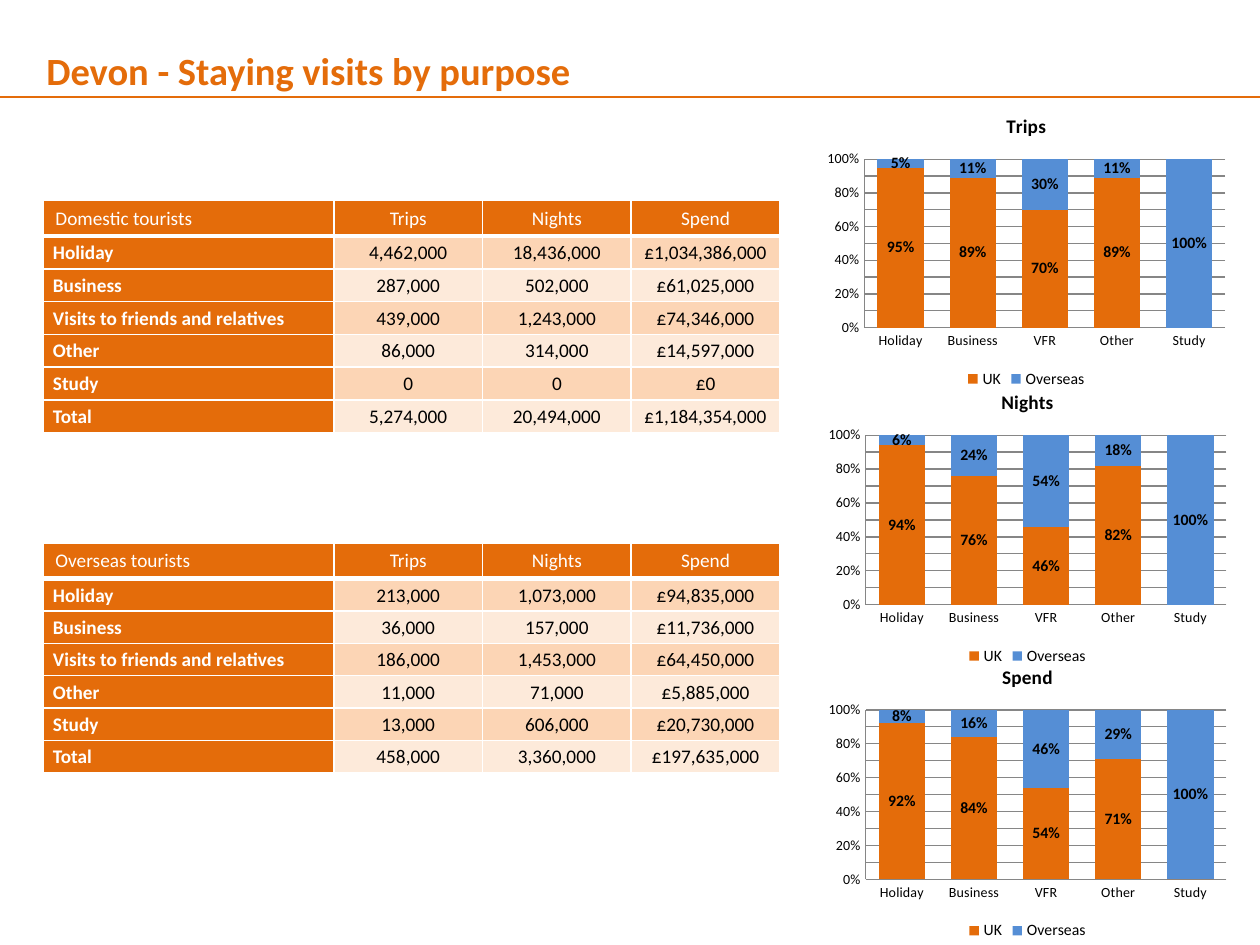
from lxml import etree
from pptx import Presentation
from pptx.chart.data import CategoryChartData
from pptx.dml.color import RGBColor
from pptx.enum.chart import XL_CHART_TYPE, XL_LEGEND_POSITION, XL_TICK_MARK
from pptx.enum.shapes import MSO_CONNECTOR
from pptx.enum.text import MSO_ANCHOR, PP_ALIGN
from pptx.oxml.ns import qn
from pptx.util import Inches, Pt

STACKED = XL_CHART_TYPE.COLUMN_STACKED_100
LEGEND_BOTTOM = XL_LEGEND_POSITION.BOTTOM
NO_TICK = XL_TICK_MARK.NONE
STRAIGHT = MSO_CONNECTOR.STRAIGHT
MIDDLE = MSO_ANCHOR.MIDDLE
LEFT, CENTER = PP_ALIGN.LEFT, PP_ALIGN.CENTER

FONT = "Calibri"
ORANGE = RGBColor(0xE4, 0x6C, 0x0A)
BLUE = RGBColor(0x55, 0x8E, 0xD5)
BANDS = (RGBColor(0xFC, 0xD5, 0xB5), RGBColor(0xFD, 0xEA, 0xDA))
WHITE = RGBColor(0xFF, 0xFF, 0xFF)
BLACK = RGBColor(0, 0, 0)
GRID_GREY = RGBColor(0x86, 0x86, 0x86)

TITLE = "Devon - Staying visits by purpose"
MEASURES = ("Trips", "Nights", "Spend")
# heading, top, height, rows
TABLES = [
    ("Domestic tourists", 1.59, 1.84, [
        ("Holiday", "4,462,000", "18,436,000", "£1,034,386,000"),
        ("Business", "287,000", "502,000", "£61,025,000"),
        ("Visits to friends and relatives", "439,000", "1,243,000", "£74,346,000"),
        ("Other", "86,000", "314,000", "£14,597,000"),
        ("Study", "0", "0", "£0"),
        ("Total", "5,274,000", "20,494,000", "£1,184,354,000"),
    ]),
    ("Overseas tourists", 4.31, 1.82, [
        ("Holiday", "213,000", "1,073,000", "£94,835,000"),
        ("Business", "36,000", "157,000", "£11,736,000"),
        ("Visits to friends and relatives", "186,000", "1,453,000", "£64,450,000"),
        ("Other", "11,000", "71,000", "£5,885,000"),
        ("Study", "13,000", "606,000", "£20,730,000"),
        ("Total", "458,000", "3,360,000", "£197,635,000"),
    ]),
]
TABLE_LEFT, HEADER_HEIGHT = 0.34, 0.28
COLUMN_WIDTHS = (2.31, 1.18, 1.18, 1.18)

CATEGORIES = ("Holiday", "Business", "VFR", "Other", "Study")
# title, left, top, height, UK shares, overseas shares
CHARTS = [
    ("Trips", 6.5, 0.77, 2.35, (0.95, 0.89, 0.7, 0.89, 0), (0.05, 0.11, 0.3, 0.11, 1)),
    ("Nights", 6.51, 2.96, 2.36, (0.94, 0.76, 0.46, 0.82, 0), (0.06, 0.24, 0.54, 0.18, 1)),
    ("Spend", 6.51, 5.14, 2.36, (0.92, 0.84, 0.54, 0.71, 0), (0.08, 0.16, 0.46, 0.29, 1)),
]
CHART_WIDTH = 3.29


def set_font(font, size, color=BLACK, bold=False):
    values = {"name": FONT, "size": Pt(size), "bold": bold}
    for name, value in values.items():
        setattr(font, name, value)
    font.color.rgb = color


def set_borders(cell, bottom_width):
    properties = cell._tc.get_or_add_tcPr()
    widths = {"a:lnL": 1, "a:lnR": 1, "a:lnT": 1, "a:lnB": bottom_width}
    for position, (tag, width) in enumerate(widths.items()):
        line = etree.Element(qn(tag), w=str(Pt(width)))
        fill = etree.SubElement(line, qn("a:solidFill"))
        etree.SubElement(fill, qn("a:srgbClr"), val=str(WHITE))
        properties.insert(position, line)


def format_cell(cell, text, row, column):
    header, label = row == 0, column == 0
    cell.text = text
    cell.vertical_anchor = MIDDLE
    if not header:
        margins = {
            "margin_left": Inches(0.08 if label else 0.01),
            "margin_top": Inches(0.01),
            "margin_right": Inches(0.01),
            "margin_bottom": 0,
        }
        for name, value in margins.items():
            setattr(cell, name, value)
    paragraph = cell.text_frame.paragraphs[0]
    paragraph.alignment = LEFT if label else CENTER
    on_orange = header or label
    set_font(paragraph.runs[0].font, 11, WHITE if on_orange else BLACK, label and not header)
    cell.fill.solid()
    cell.fill.fore_color.rgb = ORANGE if on_orange else BANDS[(row - 1) % 2]
    set_borders(cell, 3 if header else 1)


def add_visits_table(slide, heading, top, height, rows):
    content = [(heading, *MEASURES), *rows]
    table = slide.shapes.add_table(
        len(content), len(COLUMN_WIDTHS), Inches(TABLE_LEFT), Inches(top),
        Inches(sum(COLUMN_WIDTHS)), Inches(height)).table
    for column, width in zip(table.columns, COLUMN_WIDTHS):
        column.width = Inches(width)
    for index, row in enumerate(table.rows):
        row.height = Inches((height - HEADER_HEIGHT) / len(rows) if index else HEADER_HEIGHT)
    for row, texts in enumerate(content):
        for column, text in enumerate(texts):
            format_cell(table.cell(row, column), text, row, column)


def hide_label(labels, index):
    label = etree.Element(qn("c:dLbl"))
    etree.SubElement(label, qn("c:idx"), val=str(index))
    etree.SubElement(label, qn("c:delete"), val="1")
    labels._element.insert(0, label)


def add_share_chart(slide, title, left, top, height, uk, overseas):
    data = CategoryChartData(number_format="0%")
    data.categories = CATEGORIES
    data.add_series("UK", uk)
    data.add_series("Overseas", overseas)
    chart = slide.shapes.add_chart(
        STACKED, Inches(left), Inches(top), Inches(CHART_WIDTH), Inches(height), data).chart
    set_font(chart.font, 18)

    chart.has_title = True
    chart.chart_title.include_in_layout = False
    chart.chart_title.text_frame.text = title
    set_font(chart.chart_title.text_frame.paragraphs[0].runs[0].font, 11, bold=True)

    chart.has_legend = True
    chart.legend.position = LEGEND_BOTTOM
    chart.legend.include_in_layout = False
    set_font(chart.legend.font, 9)

    for axis in (chart.category_axis, chart.value_axis):
        axis.major_tick_mark = axis.minor_tick_mark = NO_TICK
        axis.format.line.color.rgb = GRID_GREY
        set_font(axis.tick_labels.font, 8)
    chart.value_axis.has_major_gridlines = True
    chart.value_axis.major_gridlines.format.line.color.rgb = GRID_GREY
    chart.value_axis.tick_labels.number_format = "0%"
    chart.value_axis.tick_labels.number_format_is_linked = False

    plot = chart.plots[0]
    plot.gap_width, plot.overlap, plot.vary_by_categories = 55, 100, False
    for series, color in zip(plot.series, (ORANGE, BLUE)):
        series.format.fill.solid()
        series.format.fill.fore_color.rgb = color
        labels = series.data_labels
        labels.show_value = True
        labels.number_format = "0%"
        labels.number_format_is_linked = False
        set_font(labels.font, 9, bold=True)
        for index, value in enumerate(series.values):
            if value == 0:
                hide_label(labels, index)


def add_heading(slide):
    box = slide.shapes.add_textbox(Inches(0.27), Inches(0.25), Inches(9.53), Inches(0.55))
    box.text_frame.word_wrap = True
    paragraph = box.text_frame.paragraphs[0]
    paragraph.line_spacing = 1.2
    run = paragraph.add_run()
    run.text = TITLE
    set_font(run.font, 22, ORANGE, bold=True)

    rule = slide.shapes.add_connector(STRAIGHT, 0, Inches(0.77), Inches(10), Inches(0.77))
    rule.line.color.rgb = ORANGE
    rule.line.width = Pt(0.75)
    etree.SubElement(rule._element.spPr, qn("a:effectLst"))


def main():
    presentation = Presentation()
    presentation.slide_width, presentation.slide_height = Inches(10), Inches(7.5)
    slide = presentation.slides.add_slide(presentation.slide_layouts[6])
    add_heading(slide)
    for table in TABLES:
        add_visits_table(slide, *table)
    for chart in CHARTS:
        add_share_chart(slide, *chart)
    presentation.save("out.pptx")


if __name__ == "__main__":
    main()
